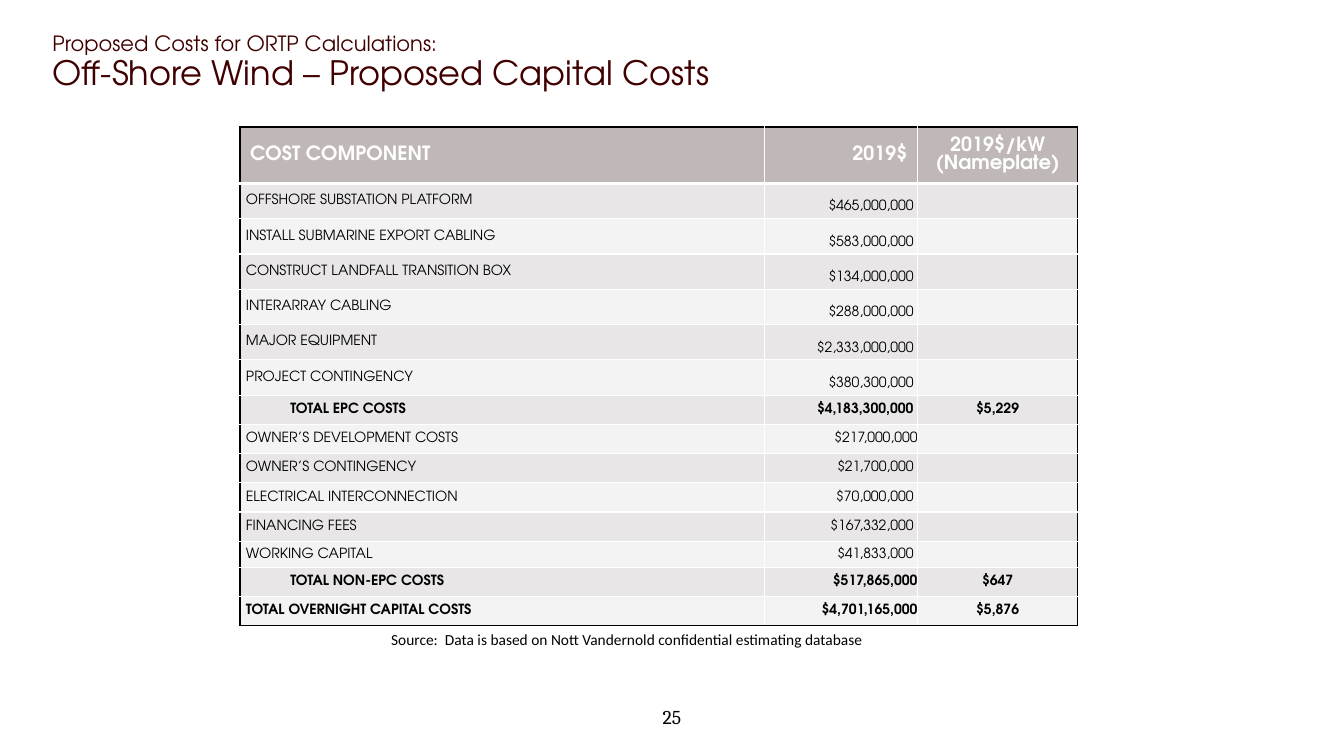
from lxml.etree import SubElement
from pptx import Presentation
from pptx.dml.color import RGBColor
from pptx.enum.text import MSO_ANCHOR as Anchor, MSO_AUTO_SIZE as AutoSize, PP_ALIGN as Align
from pptx.oxml.ns import qn
from pptx.util import Inches, Pt

COLORS = {"title": "400000", "ink": "000000", "white": "FFFFFF",
          "header": "BFB8B7", "dark_band": "E8E6E6", "light_band": "F4F3F3"}
FONT = "TeX Gyre Adventor"
ALIGNMENTS = (Align.LEFT, Align.RIGHT, Align.CENTER)
COLUMN_WIDTHS = (5.2, 1.52, 1.59)
ROW_HEIGHTS = [0.56] + [0.35] * 6 + [0.29] * 5 + [0.26] + [0.29] * 2
HEADER = ("COST COMPONENT", "2019$", "2019$/kW\n(Nameplate)")
COSTS = (
    ("OFFSHORE SUBSTATION PLATFORM", "$465,000,000", ""),
    ("INSTALL SUBMARINE EXPORT CABLING", "$583,000,000", ""),
    ("CONSTRUCT LANDFALL TRANSITION BOX", "$134,000,000", ""),
    ("INTERARRAY CABLING", "$288,000,000", ""),
    ("MAJOR EQUIPMENT", "$2,333,000,000", ""),
    ("PROJECT CONTINGENCY", "$380,300,000", ""),
    ("TOTAL EPC COSTS", "$4,183,300,000", "$5,229"),
    ("OWNER’S DEVELOPMENT COSTS", "$217,000,000", ""),
    ("OWNER’S CONTINGENCY", "$21,700,000", ""),
    ("ELECTRICAL INTERCONNECTION", "$70,000,000", ""),
    ("FINANCING FEES", "$167,332,000", ""),
    ("WORKING CAPITAL", "$41,833,000", ""),
    ("TOTAL NON-EPC COSTS", "$517,865,000", "$647"),
    ("TOTAL OVERNIGHT CAPITAL COSTS", "$4,701,165,000", "$5,876"),
)
FLUSH_ROWS = (8, 13, 14)
LOWERED_ROWS = range(1, 7)


class CostSlide:
    """Hold the style and the current slide."""

    def __init__(self, deck):
        """Add a title-only slide to the deck."""
        self.page = deck.slides.add_slide(deck.slide_layouts[5])

    def style(self, span, size, color="ink", bold=False, name=FONT):
        """Format one run."""
        span.font.name = name
        span.font.size = Pt(size)
        span.font.bold = bold
        span.font.color.rgb = RGBColor.from_string(COLORS[color])

    def title(self, lead, heading):
        """Fill the title placeholder with a small and a large line."""
        box = self.page.shapes.title
        box.left, box.top = Inches(0.42), Inches(0)
        box.width, box.height = Inches(11.5), Inches(1.25)
        frame = box.text_frame
        frame.text = f"{lead}\v{heading}"
        frame.auto_size = AutoSize.NONE
        frame.vertical_anchor = Anchor.MIDDLE
        para = frame.paragraphs[0]
        para.alignment = Align.LEFT
        para.line_spacing = 0.9
        for span, size in zip(para.runs, (15, 24)):
            self.style(span, size, "title")
        line_break = para._p.find(qn("a:br"))
        SubElement(line_break, qn("a:rPr")).set("sz", "1500")

    def text(self, words, place, size, name, align=Align.LEFT, spacing=1.0):
        """Add a one-line text box."""
        box = self.page.shapes.add_textbox(*map(Inches, place))
        frame = box.text_frame
        frame.word_wrap = True
        frame.text = words
        para = frame.paragraphs[0]
        para.alignment = align
        para.line_spacing = spacing
        self.style(para.runs[0], size, name=name)

    def borders(self, cell, edges):
        """Draw the cell edges, each given as a colour and a width."""
        properties = cell._tc.get_or_add_tcPr()
        for side in "LRTB":
            color, width = edges[side]
            line = SubElement(properties, qn(f"a:ln{side}"), w=str(Pt(width)))
            fill = SubElement(line, qn("a:solidFill"))
            SubElement(fill, qn("a:srgbClr"), val=COLORS[color])

    def cell(self, cell, row, column, words):
        """Fill and format one table cell."""
        is_header = row == 0
        is_total = words.startswith("TOTAL") or COSTS[row - 1][0].startswith("TOTAL")
        last_row, last_column = len(COSTS), len(HEADER) - 1
        self.borders(cell, {
            "L": ("white" if column else "ink", 1),
            "R": ("ink" if column == last_column else "white", 1),
            "T": ("ink" if is_header else "white", 1),
            "B": ("ink" if row == last_row else "white", 3 if row == 0 else 1),
        })
        band = "header" if is_header else "dark_band" if row % 2 else "light_band"
        cell.fill.solid()
        cell.fill.fore_color.rgb = RGBColor.from_string(COLORS[band])
        cell.vertical_anchor = Anchor.MIDDLE
        if not is_header:
            cell.margin_left = cell.margin_right = 0
            cell.margin_top = cell.margin_bottom = 0
            if column == 0:
                indented = is_total and row < last_row
                cell.margin_left = Inches(0.5 if indented else 0.06)
            elif column == 1:
                cell.margin_right = Inches(0 if row in FLUSH_ROWS else 0.04)
                cell.margin_top = Inches(0.12 if row in LOWERED_ROWS else 0)
        cell.text_frame.text = words
        for para in cell.text_frame.paragraphs:
            para.alignment = ALIGNMENTS[column]
            for span in para.runs:
                self.style(span, 14 if is_header else 10,
                           "white" if is_header else "ink", is_header or is_total)
            if not words:
                SubElement(para._p, qn("a:endParaRPr")).set("sz", "1000")

    def cost_table(self, left, top):
        """Add the table of cost components."""
        rows = (HEADER, *COSTS)
        frame = self.page.shapes.add_table(
            len(rows), len(HEADER), Inches(left), Inches(top),
            Inches(sum(COLUMN_WIDTHS)), Inches(sum(ROW_HEIGHTS)))
        table = frame.table
        for column, width in zip(table.columns, COLUMN_WIDTHS):
            column.width = Inches(width)
        for row, height in zip(table.rows, ROW_HEIGHTS):
            row.height = Inches(height)
        for row, values in enumerate(rows):
            for column, words in enumerate(values):
                self.cell(table.cell(row, column), row, column, words)


def main():
    """Build and save the deck."""
    deck = Presentation()
    deck.slide_width, deck.slide_height = Inches(13.33), Inches(7.5)
    slide = CostSlide(deck)
    slide.title("Proposed Costs for ORTP Calculations:",
                "Off-Shore Wind – Proposed Capital Costs")
    slide.cost_table(2.38, 1.26)
    slide.text("Source:  Data is based on Nott Vandernold confidential estimating database",
               (3.78, 6.2, 5.51, 0.29), 11, "Calibri")
    slide.text("25", (5.34, 6.97, 2.65, 0.43), 14, "Cambria", Align.CENTER, 0.9)
    deck.save("out.pptx")


if __name__ == "__main__":
    main()
